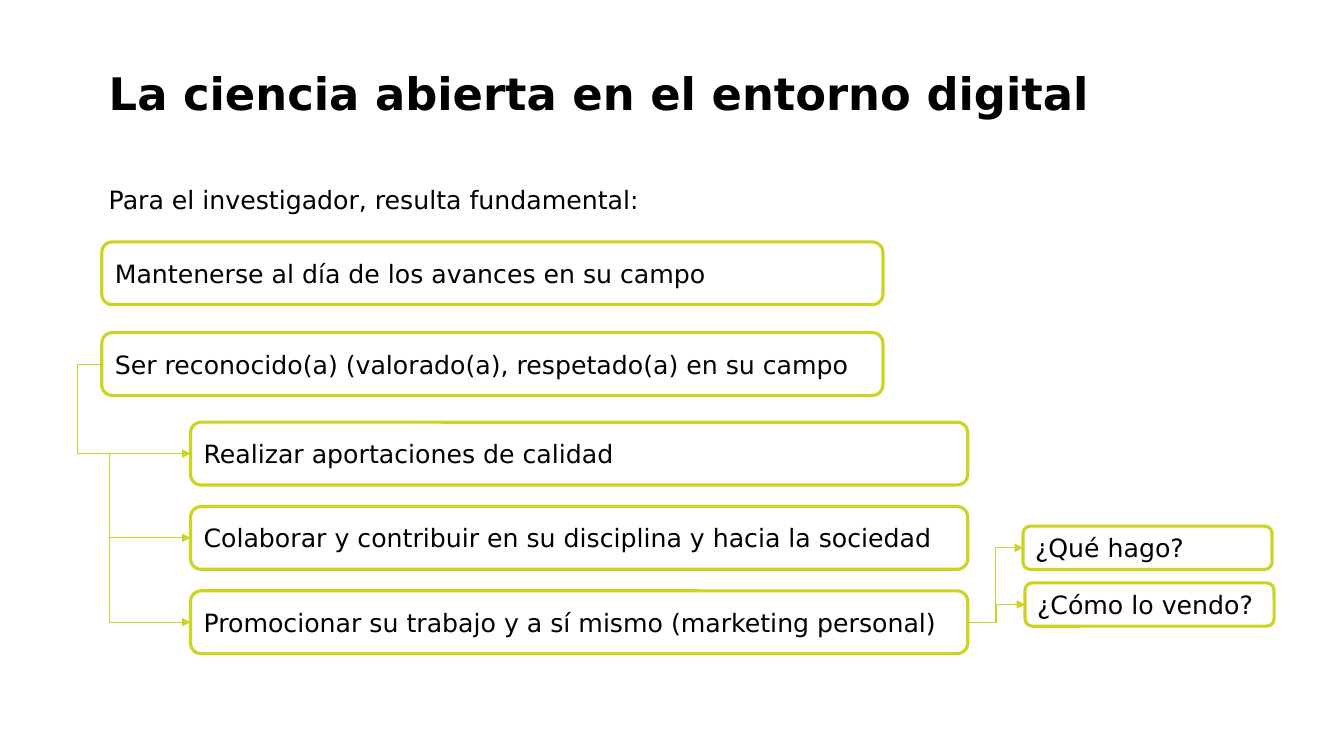
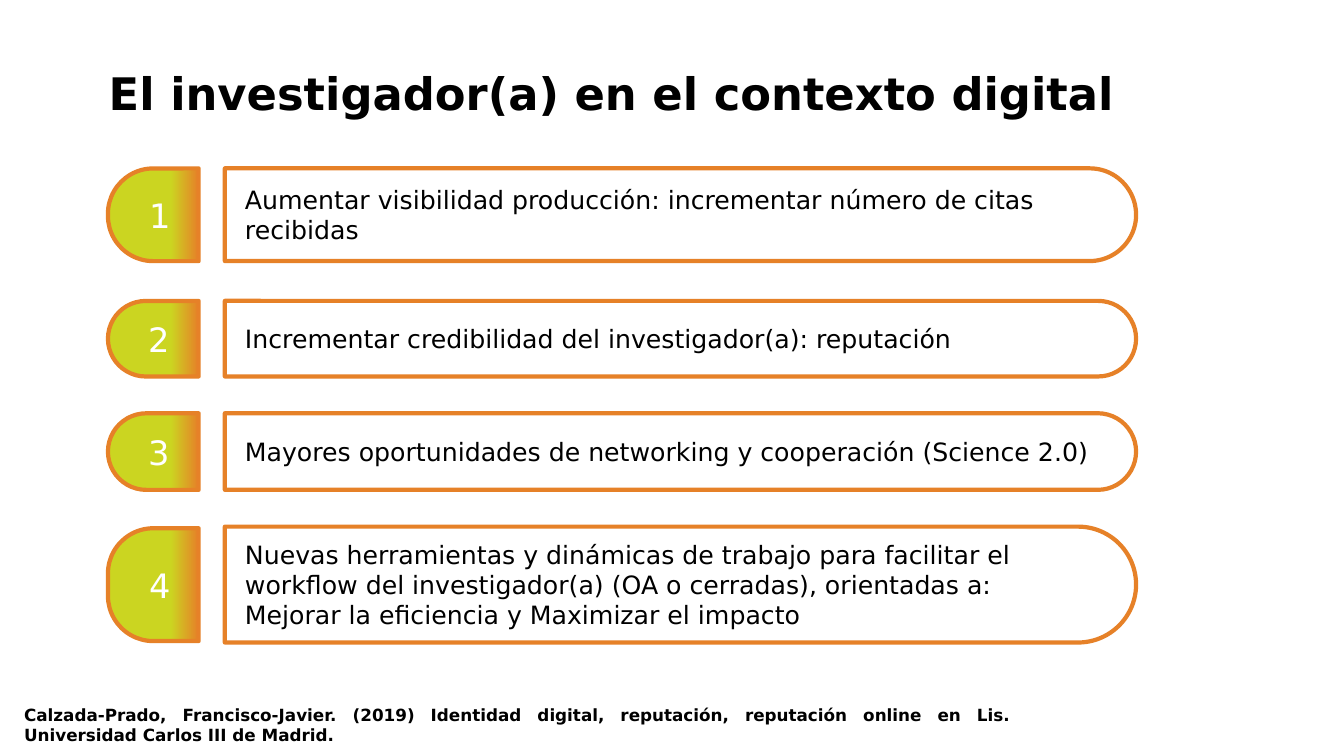
from pptx import Presentation
from pptx.dml.color import RGBColor
from pptx.enum.shapes import MSO_CONNECTOR as Connector, MSO_SHAPE as Shape
from pptx.enum.text import MSO_ANCHOR as Anchor, PP_ALIGN as Align
from pptx.oxml.ns import qn
from pptx.util import Inches, Pt
from lxml.etree import SubElement

COLORS = {"text": "000000", "paper": "FFFFFF", "lime": "CBD521", "orange": "E68128"}
FONT = "DejaVu Sans"
WIDTH, HEIGHT = Inches(13.33), Inches(7.5)


# Lengths are percentages of the slide's width or height
def across(share):
    return round(WIDTH * share / 100)


def down(share):
    return round(HEIGHT * share / 100)


def color(name):
    return RGBColor.from_string(COLORS[name])


# Text
def write(shape, *lines, size=18, bold=False, ink="text", align=Align.LEFT,
          anchor=Anchor.TOP, direction=None):
    frame = shape.text_frame
    frame.word_wrap = True
    frame.vertical_anchor = anchor
    if direction:
        frame._txBody.bodyPr.set("vert", direction)
    for index, line in enumerate(lines):
        paragraph = frame.add_paragraph() if index else frame.paragraphs[0]
        paragraph.alignment = align
        run = paragraph.add_run()
        run.text = line
        run.font.name, run.font.size, run.font.bold = FONT, Pt(size), bold
        run.font.color.rgb = color(ink)


def add_text(slide, x, y, width, height, text, **style):
    box = slide.shapes.add_textbox(across(x), down(y), across(width), down(height))
    write(box, text, **style)


def add_titled_slide(presentation, title):
    slide = presentation.slides.add_slide(presentation.slide_layouts[6])
    add_text(slide, 7.35, 8, 78.1, 8.53, title, size=32, bold=True)
    return slide


# Outlined shapes
def outline(shape, line, weight):
    shape.shadow.inherit = False
    shape.fill.solid()
    shape.fill.fore_color.rgb = color("paper")
    shape.line.color.rgb = color(line)
    shape.line.width = Pt(weight)


def add_box(slide, x, y, width, height, text):
    box = slide.shapes.add_shape(Shape.ROUNDED_RECTANGLE, across(x), down(y),
                                 across(width), down(height))
    outline(box, "lime", 2.25)
    write(box, text, anchor=Anchor.MIDDLE)


def add_elbow(slide, start, end, bend):
    """Arrow with a right-angled path whose upright part stands at bend."""
    connector = slide.shapes.add_connector(
        Connector.ELBOW, across(start[0]), down(start[1]), across(end[0]), down(end[1]))
    connector.line.color.rgb = color("lime")
    connector.line.width = Pt(0.5)
    SubElement(connector.line._get_or_add_ln(), qn("a:tailEnd"), type="triangle")
    properties = connector._element.spPr
    SubElement(properties, qn("a:effectLst"))
    adjustment = round(100000 * (bend - start[0]) / (end[0] - start[0]))
    guides = properties.find(qn("a:prstGeom")).get_or_add_avLst()
    SubElement(guides, qn("a:gd"), name="adj1", fmla=f"val {adjustment}")


def add_half_pill(slide, x, y, width, height):
    """Shape turned a quarter left, so that its round end faces left."""
    long_side, short_side = across(width), down(height)
    offset = (long_side - short_side) // 2
    pill = slide.shapes.add_shape(Shape.ROUND_2_SAME_RECTANGLE, across(x) + offset,
                                  down(y) - offset, short_side, long_side)
    pill.rotation = 270
    pill.adjustments[0], pill.adjustments[1] = 0.5, 0
    outline(pill, "orange", 3)
    return pill


def add_badge(slide, y, height, number):
    badge = add_half_pill(slide, 8.03, y, 6.75, height)
    badge.fill.gradient()
    badge.fill.gradient_angle = 270
    for stop, name, position in zip(badge.fill.gradient_stops, ("lime", "orange"), (0.69, 1)):
        stop.color.rgb = color(name)
        stop.position = position
    write(badge, str(number), size=24, ink="paper", align=Align.CENTER,
          anchor=Anchor.MIDDLE, direction="vert")


def add_bar(slide, y, height, lines):
    bar = add_half_pill(slide, 16.73, y, 67.8, height)
    bar._element.spPr.find(qn("a:xfrm")).set("flipV", "1")
    frame = bar.text_frame
    frame.margin_left = frame.margin_top = frame.margin_right = Inches(0.12)
    frame.margin_bottom = Inches(0.2)
    write(bar, *lines, anchor=Anchor.MIDDLE, direction="vert270")


# Slides
def build_open_science(presentation):
    slide = add_titled_slide(presentation, "La ciencia abierta en el entorno digital")
    add_text(slide, 7.35, 23.73, 50, 5.33, "Para el investigador, resulta fundamental:")
    box_height, answer_height = 8.3, 5.73
    goal_x, goal_y, goal_step = 7.58, 32, 12
    action_x, action_y, action_step, action_width = 14.18, 55.85, 11.15, 57.82

    goals = ("Mantenerse al día de los avances en su campo",
             "Ser reconocido(a) (valorado(a), respetado(a) en su campo")
    for index, goal in enumerate(goals):
        add_box(slide, goal_x, goal_y + index * goal_step, 58.12, box_height, goal)

    actions = ("Realizar aportaciones de calidad",
               "Colaborar y contribuir en su disciplina y hacia la sociedad",
               "Promocionar su trabajo y a sí mismo (marketing personal)")
    middles = [action_y + index * action_step + box_height / 2 for index in range(len(actions))]
    for middle, action in zip(middles, actions):
        add_box(slide, action_x, middle - box_height / 2, action_width, box_height, action)

    # Arrows from the second goal down to each action
    add_elbow(slide, (goal_x, goal_y + goal_step + box_height / 2), (action_x, middles[0]), 5.78)
    for upper, lower in zip(middles, middles[1:]):
        add_elbow(slide, (action_x + 0.1, upper), (action_x, lower), 8.2)

    # Questions that follow from the last action
    source_x = action_x + action_width
    for x, y, question in ((76.12, 69.6, "¿Qué hago?"), (76.27, 77.1, "¿Cómo lo vendo?")):
        add_box(slide, x, y, 18.53, answer_height, question)
        add_elbow(slide, (source_x, middles[-1]), (x, y + answer_height / 2), (source_x + x) / 2)


def build_researcher(presentation):
    slide = add_titled_slide(presentation, "El investigador(a) en el contexto digital")
    # Top, bar height, badge height and lines of each aim
    aims = (
        (22.27, 12.27, 12.27,
         ["Aumentar visibilidad producción: incrementar número de citas recibidas"]),
        (39.8, 10, 10, ["Incrementar credibilidad del investigador(a): reputación"]),
        (54.67, 10.13, 10.13,
         ["Mayores oportunidades de networking y cooperación (Science 2.0)"]),
        (69.67, 15.33, 14.93,
         ["Nuevas herramientas y dinámicas de trabajo para facilitar el workflow del "
          "investigador(a) (OA o cerradas), orientadas a:",
          "Mejorar la eficiencia y Maximizar el impacto"]),
    )
    for number, (top, bar_height, badge_height, lines) in enumerate(aims, 1):
        add_badge(slide, top + (bar_height - badge_height) / 2, badge_height, number)
        add_bar(slide, top, bar_height, lines)
    add_text(slide, 1.05, 92.53, 74.94, 6.67,
             "Calzada-Prado, Francisco-Javier. (2019) Identidad digital, reputación, "
             "reputación online en Lis. Universidad Carlos III de Madrid.",
             size=12, bold=True, align=Align.JUSTIFY)


def main():
    presentation = Presentation()
    presentation.slide_width, presentation.slide_height = WIDTH, HEIGHT
    build_open_science(presentation)
    build_researcher(presentation)
    presentation.save("out.pptx")


if __name__ == "__main__":
    main()
